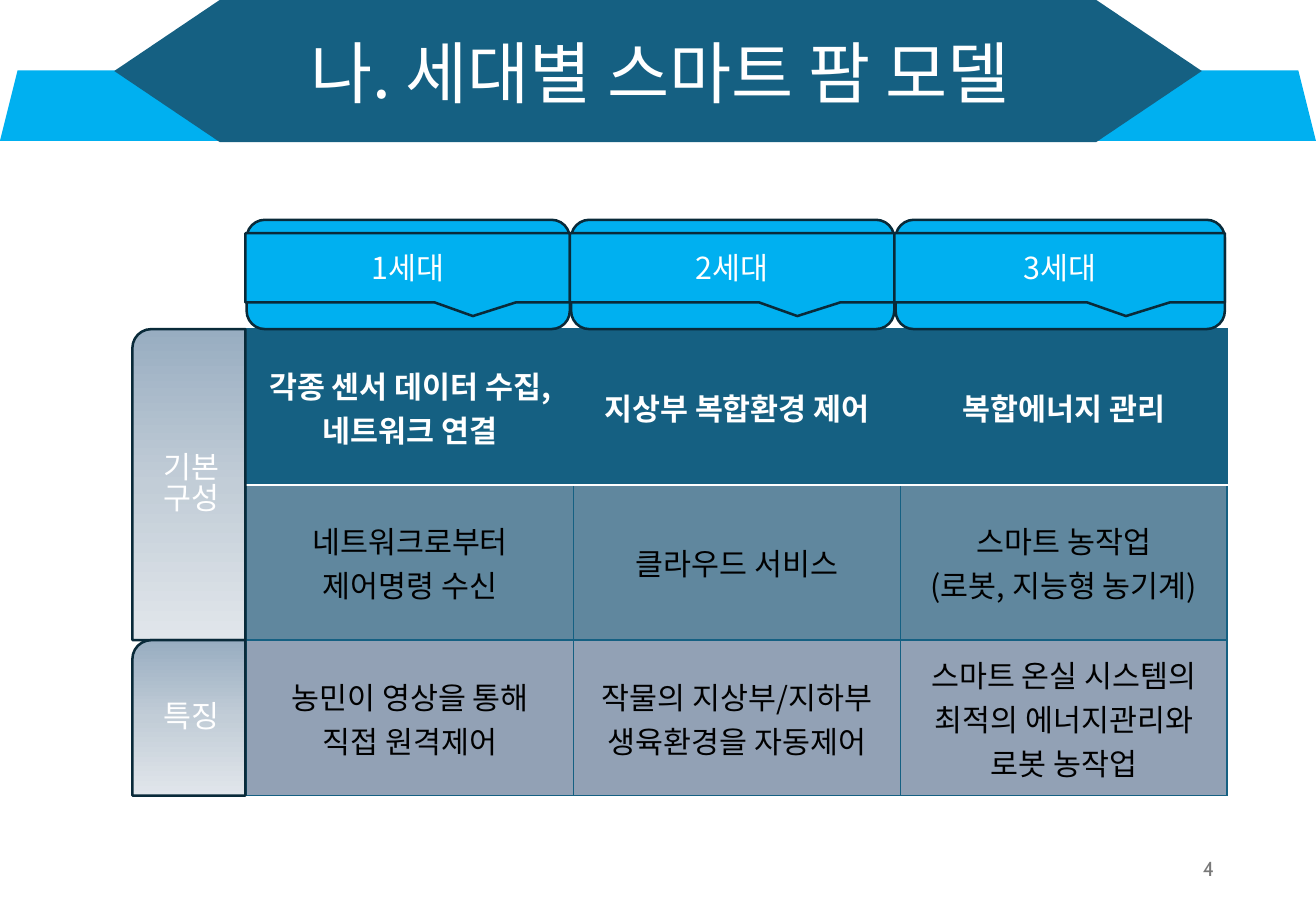
from copy import deepcopy

from lxml import etree
from pptx import Presentation
from pptx.dml.color import RGBColor
from pptx.enum.shapes import MSO_SHAPE as SHAPE
from pptx.enum.text import MSO_ANCHOR as ANCHOR, PP_ALIGN as ALIGN
from pptx.oxml.ns import qn
from pptx.util import Inches, Pt

# Content
TITLE = "나. 세대별 스마트 팜 모델"
PAGE_NUMBER = "4"
GENERATIONS = [("1세대", 2.66), ("2세대", 2.66), ("3세대", 2.71)]  # label, tab width
SIDE_LABELS = [("기본구성", 2), ("특징", 1)]  # label, table rows covered
MODEL_ROWS = [
    ["각종 센서 데이터 수집,\n네트워크 연결", "지상부 복합환경 제어", "복합에너지 관리"],
    ["네트워크로부터\n제어명령 수신", "클라우드 서비스", "스마트 농작업\n(로봇, 지능형 농기계)"],
    ["농민이 영상을 통해\n직접 원격제어", "작물의 지상부/지하부\n생육환경을 자동제어",
     "스마트 온실 시스템의\n최적의 에너지관리와\n로봇 농작업"],
]

# Style
KOREAN_FONT, NUMBER_FONT = "Noto Sans CJK KR", "Cabin"
WHITE = RGBColor(0xFF, 0xFF, 0xFF)
BLACK = RGBColor(0, 0, 0)
GRAY = RGBColor(0x79, 0x79, 0x79)
TEAL = RGBColor(0x15, 0x60, 0x82)
SKY = RGBColor(0x00, 0xB0, 0xF0)
OUTLINE = RGBColor(0x09, 0x2A, 0x39)
ROW_FILLS = [TEAL, RGBColor(0x60, 0x87, 0x9E), RGBColor(0x92, 0xA1, 0xB5)]
SIDE_GRADIENT = [(0, RGBColor(0x98, 0xAD, 0xC1)), (0.5, RGBColor(0xC2, 0xCD, 0xD7)),
                 (1, RGBColor(0xE1, 0xE6, 0xEB))]

# Layout in inches
SLIDE_WIDTH, SLIDE_HEIGHT = 10.83, 7.5
TABLE_LEFT, TABLE_TOP, COLUMN_WIDTH, ROW_HEIGHT = 2.03, 2.71, 2.69, 1.28
TAB_TOP, TAB_HEIGHT, TAB_STEP = 1.81, 0.9, 2.67
SIDE_LEFT, SIDE_WIDTH = 1.09, 0.93


def write(text_frame, text, size, color, bold=False, align=ALIGN.CENTER,
          font_name=KOREAN_FONT, spacing=None):
    text_frame.text = text
    text_frame.word_wrap = True
    text_frame.vertical_anchor = ANCHOR.MIDDLE
    for paragraph in text_frame.paragraphs:
        paragraph.alignment = align
        if spacing:
            paragraph.line_spacing = spacing
        for run in paragraph.runs:
            font = run.font
            font.size, font.bold, font.name = Pt(size), bold, font_name
            font.color.rgb = color
            east_asian = etree.SubElement(run._r.get_or_add_rPr(), qn("a:ea"))
            east_asian.set("typeface", font_name)


def add_block(slide, kind, left, top, width, height, fill=None, outlined=True):
    shape = slide.shapes.add_shape(
        kind, Inches(left), Inches(top), Inches(width), Inches(height))
    shape.shadow.inherit = False
    if fill is not None:
        shape.fill.solid()
        shape.fill.fore_color.rgb = fill
    if outlined:
        shape.line.color.rgb = OUTLINE
        shape.line.width = Pt(1.5)
    else:
        shape.line.fill.background()
    return shape


def fill_side_gradient(shape):
    shape.fill.gradient()
    shape.fill.gradient_angle = 270
    first_stop = shape._element.spPr.find(".//" + qn("a:gs"))
    first_stop.addnext(deepcopy(first_stop))
    for stop, (position, color) in zip(shape.fill.gradient_stops, SIDE_GRADIENT):
        stop.position = position
        stop.color.rgb = color


def set_border(cell, side, color, width):
    line = etree.Element(qn("a:" + side), w=str(Pt(width)))
    solid = etree.SubElement(line, qn("a:solidFill"))
    etree.SubElement(solid, qn("a:srgbClr"), val=str(color))
    return line


def add_banner(slide):
    add_block(slide, SHAPE.TRAPEZOID, 0, 0.58, SLIDE_WIDTH, 0.58, SKY, outlined=False)
    hexagon = add_block(slide, SHAPE.HEXAGON, 0.94, 0, 8.95, 1.17, TEAL, outlined=False)
    hexagon.adjustments[0] = 0.742
    title = slide.shapes.title
    title.left, title.top = Inches(1.19), Inches(0.15)
    title.width, title.height = Inches(8.48), Inches(0.97)
    write(title.text_frame, TITLE, 40, WHITE, spacing=0.9)
    slide.shapes._spTree.append(title._element)  # bring in front of the banner


def add_model_table(slide):
    row_count, column_count = len(MODEL_ROWS), len(MODEL_ROWS[0])
    table = slide.shapes.add_table(
        row_count, column_count, Inches(TABLE_LEFT), Inches(TABLE_TOP),
        Inches(COLUMN_WIDTH * column_count), Inches(ROW_HEIGHT * row_count)).table
    for column in table.columns:
        column.width = Inches(COLUMN_WIDTH)
    for row_index, texts in enumerate(MODEL_ROWS):
        table.rows[row_index].height = Inches(ROW_HEIGHT)
        header = row_index == 0
        for column_index, text in enumerate(texts):
            cell = table.cell(row_index, column_index)
            write(cell.text_frame, text, 18, WHITE if header else BLACK, bold=header)
            cell.vertical_anchor = ANCHOR.MIDDLE
            cell.fill.solid()
            cell.fill.fore_color.rgb = ROW_FILLS[row_index]
            # White rule under the header row, teal rules elsewhere
            white_side = {0: "lnB", 1: "lnT"}.get(row_index)
            for position, side in enumerate(("lnL", "lnR", "lnT", "lnB")):
                color, width = (WHITE, 1.5) if side == white_side else (TEAL, 1)
                cell._tc.get_or_add_tcPr().insert(
                    position, set_border(cell, side, color, width))


def add_generation_tabs(slide):
    for index, (label, width) in enumerate(GENERATIONS):
        left = TABLE_LEFT + index * TAB_STEP
        add_block(slide, SHAPE.ROUNDED_RECTANGLE, left, TAB_TOP, width, TAB_HEIGHT, SKY)
        callout = add_block(slide, SHAPE.RECTANGULAR_CALLOUT, left - 0.01, TAB_TOP + 0.11,
                            width + 0.01, 0.57, SKY)
        callout.adjustments[0], callout.adjustments[1] = 0.201, 0.697
        write(callout.text_frame, label, 18, WHITE)


def add_side_labels(slide):
    top = TABLE_TOP
    for label, row_span in SIDE_LABELS:
        height = ROW_HEIGHT * row_span
        shape = add_block(slide, SHAPE.ROUND_1_RECTANGLE, SIDE_LEFT, top, SIDE_WIDTH, height)
        shape._element.spPr.find(qn("a:xfrm")).set("flipH", "1")
        fill_side_gradient(shape)
        write(shape.text_frame, label, 18, WHITE, spacing=0.85)
        top += height


def main():
    presentation = Presentation()
    presentation.slide_width = Inches(SLIDE_WIDTH)
    presentation.slide_height = Inches(SLIDE_HEIGHT)
    slide = presentation.slides.add_slide(presentation.slide_layouts[5])
    add_banner(slide)
    add_model_table(slide)
    number_box = slide.shapes.add_textbox(Inches(7.65), Inches(6.95), Inches(2.44), Inches(0.4))
    write(number_box.text_frame, PAGE_NUMBER, 12, GRAY, align=ALIGN.RIGHT, font_name=NUMBER_FONT)
    add_generation_tabs(slide)
    add_side_labels(slide)
    presentation.save("out.pptx")


if __name__ == "__main__":
    main()
